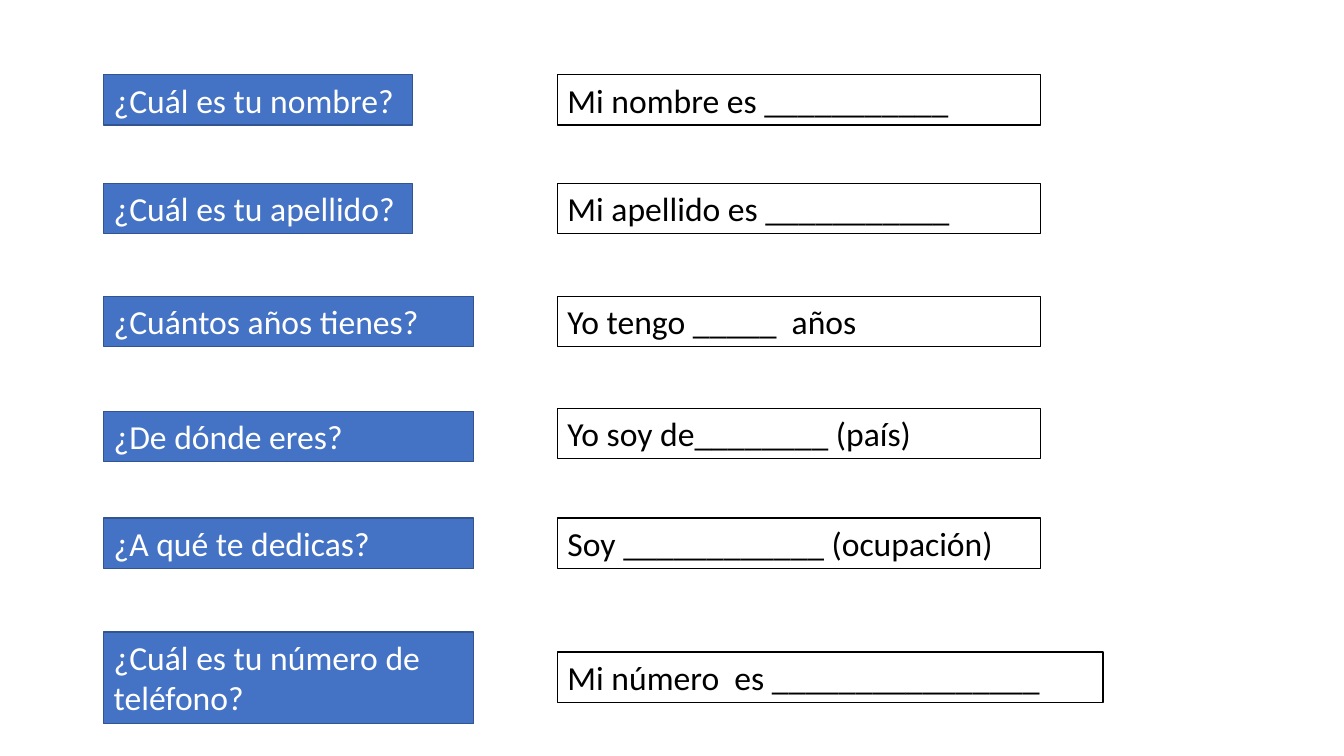
from dataclasses import dataclass

from pptx import Presentation
from pptx.dml.color import RGBColor
from pptx.enum.shapes import MSO_SHAPE
from pptx.enum.text import MSO_ANCHOR, MSO_AUTO_SIZE, PP_ALIGN
from pptx.util import Inches, Pt


@dataclass(frozen=True)
class Theme:
    font: str = "Calibri"
    size: Pt = Pt(24)
    border: Pt = Pt(1)
    blue: RGBColor = RGBColor(0x44, 0x72, 0xC4)
    dark_blue: RGBColor = RGBColor(0x32, 0x54, 0x91)
    white: RGBColor = RGBColor(0xFF, 0xFF, 0xFF)
    black: RGBColor = RGBColor(0, 0, 0)


theme = Theme()

prs = Presentation()
prs.slide_width, prs.slide_height = Inches(13.33), Inches(7.5)
s = prs.slides.add_slide(prs.slide_layouts[6])


def add_box(text, left, top, width, height, fill, line, color):
    sp = s.shapes.add_shape(MSO_SHAPE.RECTANGLE, Inches(left), Inches(top),
                            Inches(width), Inches(height))
    sp.shadow.inherit = False
    sp.fill.solid()
    sp.fill.fore_color.rgb = fill
    sp.line.color.rgb = line
    sp.line.width = theme.border
    tf = sp.text_frame
    tf.word_wrap = True
    tf.auto_size = MSO_AUTO_SIZE.SHAPE_TO_FIT_TEXT
    tf.vertical_anchor = MSO_ANCHOR.TOP
    p = tf.paragraphs[0]
    p.text = text
    p.alignment = PP_ALIGN.LEFT
    p.font.name = theme.font
    p.font.size = theme.size
    p.font.color.rgb = color


# Questions: text, top, width, height
questions = [
    ("¿Cuál es tu nombre?", 0.74, 3.06, 0.5),
    ("¿Cuál es tu apellido?", 1.82, 3.06, 0.5),
    ("¿Cuántos años tienes?", 2.94, 3.67, 0.5),
    ("¿De dónde eres?", 4.08, 3.67, 0.5),
    ("¿A qué te dedicas?", 5.14, 3.67, 0.5),
    ("¿Cuál es tu número de teléfono?", 6.27, 3.67, 0.91),
]
for text, top, width, height in questions:
    add_box(text, 1.03, top, width, height, theme.blue, theme.dark_blue, theme.white)

# Answers to complete: text, top, width
answers = [
    ("Mi nombre es ___________", 0.74, 4.79),
    ("Mi apellido es ___________", 1.82, 4.79),
    ("Yo tengo _____  años", 2.94, 4.79),
    ("Yo soy de________ (país)", 4.05, 4.79),
    ("Soy ____________ (ocupación)", 5.14, 4.79),
    ("Mi número  es ________________", 6.47, 5.41),
]
for text, top, width in answers:
    add_box(text, 5.53, top, width, 0.5, theme.white, theme.black, theme.black)

prs.save("out.pptx")
